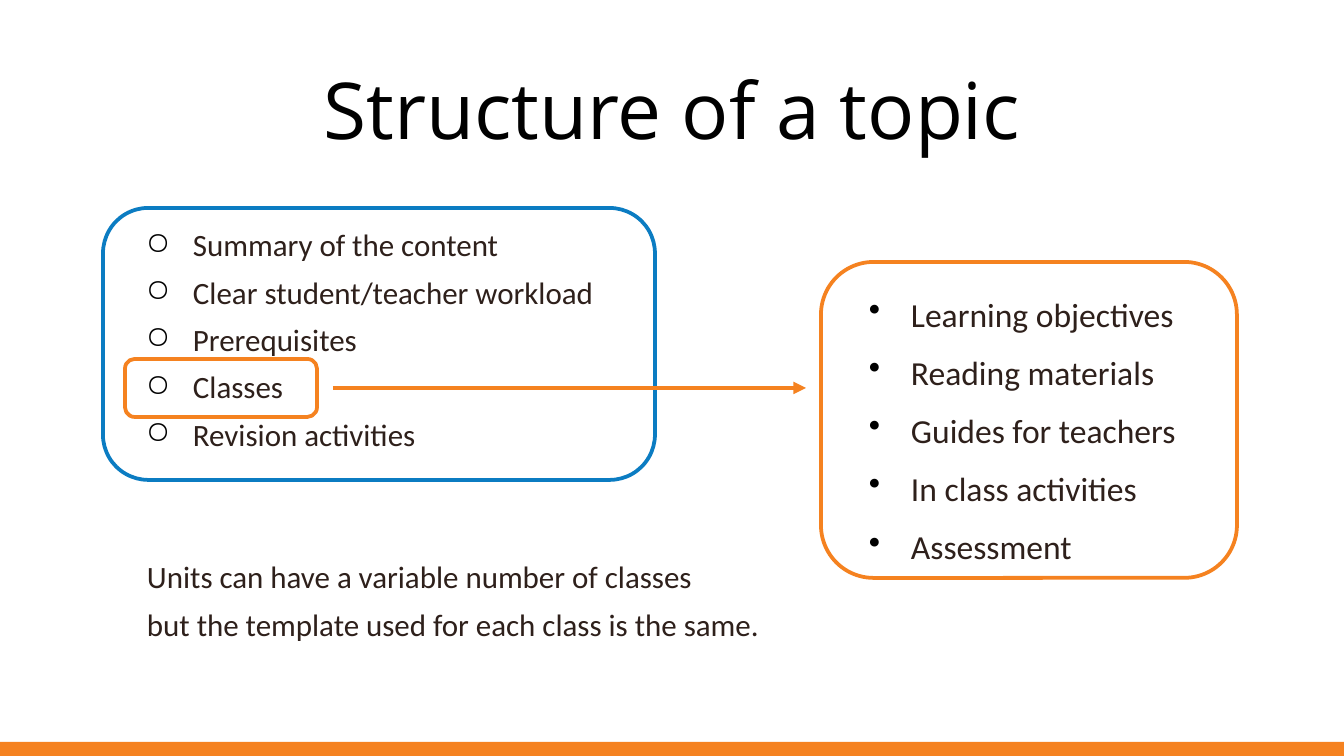
import pptx
import pptx.dml.color
import pptx.enum.shapes
import pptx.enum.text
import pptx.util
import lxml.etree
import pptx.oxml.ns

PX = 914400 / 134.4
COLORS = {"orange": "F58220", "blue": "0B7CC2", "ink": "2E201B", "black": "000000"}
SHAPES = pptx.enum.shapes.MSO_SHAPE
qn = pptx.oxml.ns.qn


def px(length):
    return pptx.util.Emu(round(length * PX))


def rgb(name):
    return pptx.dml.color.RGBColor.from_string(COLORS[name])


def format_runs(paragraph, font, size, color):
    for run in paragraph.runs:
        run.font.name = font
        run.font.size = pptx.util.Pt(size)
        run.font.color.rgb = rgb(color)


def add_bullet(paragraph, char, indent):
    properties = paragraph._p.get_or_add_pPr()
    properties.set("marL", str(px(indent)))
    properties.set("indent", str(-px(indent)))
    bullet_color = lxml.etree.SubElement(properties, qn("a:buClr"))
    lxml.etree.SubElement(bullet_color, qn("a:srgbClr"), val=COLORS["black"])
    lxml.etree.SubElement(properties, qn("a:buChar"), char=char)


def add_title(slide, box, text):
    title = slide.shapes.title
    title.left, title.top, title.width, title.height = map(px, box)
    frame = title.text_frame
    frame.text = text
    frame.vertical_anchor = pptx.enum.text.MSO_ANCHOR.BOTTOM
    frame.margin_left = frame.margin_right = px(13)
    frame.margin_top = frame.margin_bottom = px(13)
    frame.paragraphs[0].alignment = pptx.enum.text.PP_ALIGN.CENTER
    format_runs(frame.paragraphs[0], "Open Sans", 42, "black")


def add_lines(slide, box, lines, size, spacing, bullet=None, indent=0):
    """Write one paragraph per line, with no inner margin, bulleted on request."""
    frame = slide.shapes.add_textbox(*map(px, box)).text_frame
    frame.word_wrap = True
    frame.margin_left = frame.margin_right = 0
    frame.margin_top = frame.margin_bottom = 0
    frame.text = "\n".join(lines)
    for paragraph in frame.paragraphs:
        paragraph.line_spacing = spacing
        paragraph.space_after = pptx.util.Pt(8)
        format_runs(paragraph, "Calibri", size, "ink")
        if bullet:
            add_bullet(paragraph, bullet, indent)


def add_outline(slide, box, color):
    outline = slide.shapes.add_shape(SHAPES.ROUNDED_RECTANGLE, *map(px, box))
    outline.shadow.inherit = False
    outline.fill.background()
    outline.line.color.rgb = rgb(color)
    outline.line.width = pptx.util.Pt(2)


def add_topic_panel(slide, box):
    left, top, width, height = box
    topic_parts = ["Summary of the content", "Clear student/teacher workload",
                   "Prerequisites", "Classes", "Revision activities"]
    add_lines(slide, (left + 43, top + 23, width - 50, height - 30),
              topic_parts, 16.6, 0.87, "○", 47)
    add_outline(slide, box, "blue")
    add_outline(slide, (left + 22, top + 151, 192, 58), "orange")


def add_class_panel(slide, box):
    left, top, width, height = box
    class_parts = ["Learning objectives", "Reading materials", "Guides for teachers",
                   "In class activities", "Assessment"]
    add_lines(slide, (left + 48, top + 29, width - 55, height - 29),
              class_parts, 18, 1.07, "•", 42)
    add_outline(slide, box, "orange")


def add_arrow(slide, start, end):
    arrow = slide.shapes.add_connector(
        pptx.enum.shapes.MSO_CONNECTOR.STRAIGHT, *map(px, start + end))
    arrow.line.color.rgb = rgb("orange")
    arrow.line.width = pptx.util.Pt(2.25)
    lxml.etree.SubElement(arrow.line._get_or_add_ln(), qn("a:tailEnd"), type="triangle")
    lxml.etree.SubElement(arrow._element.spPr, qn("a:effectLst"))


def add_footer_bar(slide, box):
    bar = slide.shapes.add_shape(SHAPES.RECTANGLE, *map(px, box))
    bar.shadow.inherit = False
    bar.fill.solid()
    bar.fill.fore_color.rgb = rgb("orange")
    bar.line.fill.background()


def main():
    deck = pptx.Presentation()
    deck.slide_width, deck.slide_height = px(1344), px(756)
    slide = deck.slides.add_slide(deck.slide_layouts[5])
    add_footer_bar(slide, (0, 742, 1344, 14))
    add_title(slide, (46, 46, 1252, 122), "Structure of a topic")
    add_topic_panel(slide, (103, 208, 552, 272))
    add_lines(slide, (147, 563, 660, 90),
              ["Units can have a variable number of classes",
               "but the template used for each class is the same."], 16.6, 0.87)
    add_class_panel(slide, (821, 262, 416, 316))
    add_arrow(slide, (333, 388), (806, 388))
    deck.save("out.pptx")


if __name__ == "__main__":
    main()
